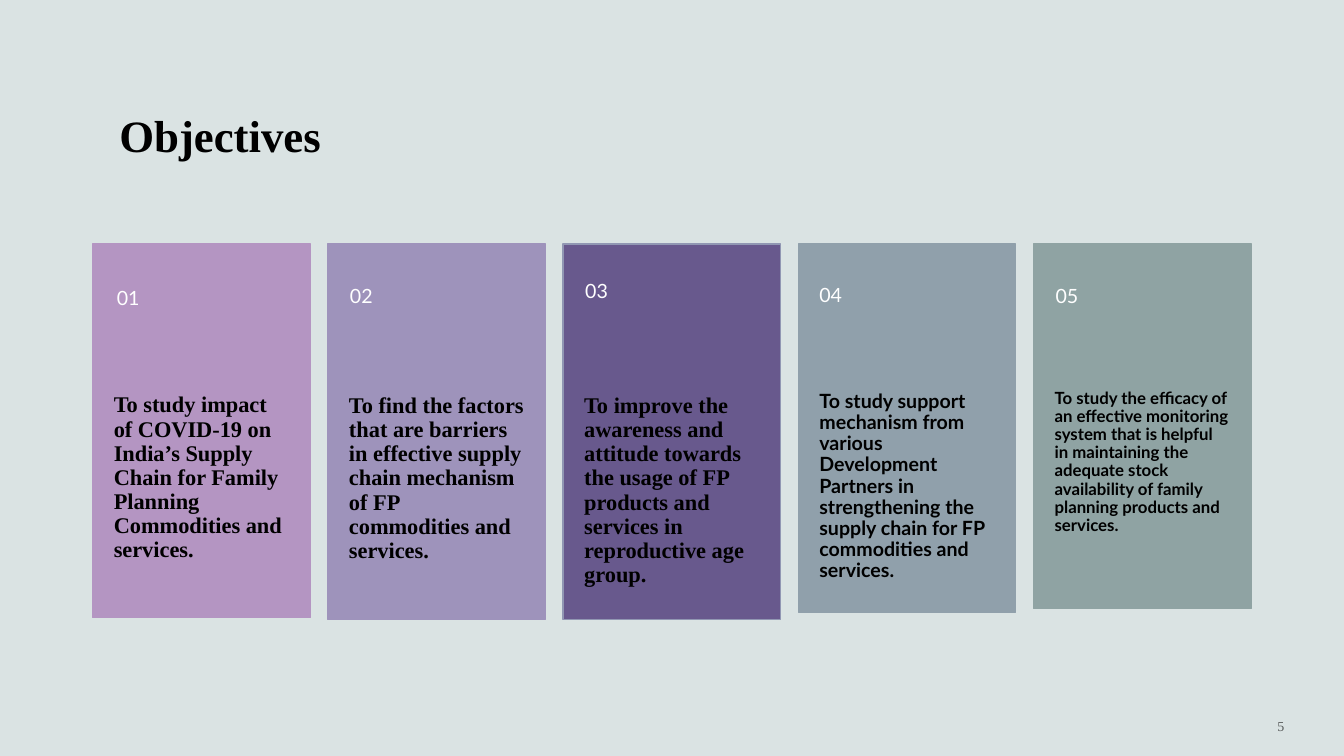
from dataclasses import dataclass

from lxml.etree import SubElement
from pptx import Presentation
from pptx.dml.color import RGBColor
from pptx.enum.shapes import MSO_SHAPE as Shape
from pptx.enum.text import MSO_ANCHOR as Anchor, MSO_AUTO_SIZE as AutoSize, PP_ALIGN as Align
from pptx.oxml.ns import qn
from pptx.shapes.shapetree import GroupShapes
from pptx.slide import Slide
from pptx.text.text import Font, TextFrame
from pptx.util import Pt

COLORS = {
    "background": "DAE3E3",
    "black": "000000",
    "white": "FFFFFF",
    "orchid": "B495C2",
    "lavender": "9E93BB",
    "violet": "68598D",
    "violet_edge": "9197B3",
    "slate": "90A0AB",
    "sage": "8FA3A3",
}
SERIF = "Times New Roman"
SANS = "Lato"

CARD_LEFT = 66.2
CARD_TOP = 174.3
CARD_PITCH = 168
CARD_WIDTH = 155.5
SIDE_INSET = 15.1
TEXT_SHARE = 0.6  # part of the card height given to the objective
NUMBER_HEIGHT = 75


@dataclass(frozen=True)
class Card:
    text: str
    font: str
    size: float
    fill: str
    edge: str
    height: float
    number_dx: float = 0
    number_dy: float = 0


CARDS = [
    Card("To study impact of COVID-19 on India’s Supply Chain for Family Planning "
         "Commodities and services.",
         SERIF, 16, "orchid", "orchid", 267, 2.2, 2.2),
    Card("To find the factors that are barriers in effective supply chain mechanism "
         "of FP commodities and services.",
         SERIF, 16, "lavender", "lavender", 268, 0.7, 0.7),
    Card("To improve the awareness and attitude towards the usage of FP products and "
         "services in reproductive age group.",
         SERIF, 16, "violet", "violet_edge", 268, 0.7, -3.3),
    Card("To study support mechanism from various Development Partners in "
         "strengthening the supply chain for FP commodities and services.",
         SANS, 14, "slate", "slate", 263),
    Card("To study the efficacy of an effective monitoring system that is helpful in "
         "maintaining the adequate stock availability of family planning products "
         "and services.",
         SANS, 12, "sage", "sage", 260.5, 0.7, 0.7),
]


def color(name: str) -> RGBColor:
    return RGBColor.from_string(COLORS[name])


def style_font(font: Font, name: str, size: float, color_name: str, bold: bool = False) -> None:
    font.name = name
    font.size = Pt(size)
    font.bold = bold
    font.color.rgb = color(color_name)


def add_card_text(shapes: GroupShapes, text: str, left: float, top: float, height: float,
                  inset_top: float, inset_bottom: float) -> TextFrame:
    box = shapes.add_textbox(Pt(left), Pt(top), Pt(CARD_WIDTH), Pt(height))
    frame = box.text_frame
    frame.word_wrap = True
    frame.margin_left = frame.margin_right = Pt(SIDE_INSET)
    frame.margin_top, frame.margin_bottom = Pt(inset_top), Pt(inset_bottom)
    frame.text = text
    frame.paragraphs[0].line_spacing = 0.9
    return frame


def add_card(slide: Slide, index: int, card: Card) -> None:
    shapes = slide.shapes.add_group_shape().shapes
    left = CARD_LEFT + index * CARD_PITCH

    panel = shapes.add_shape(Shape.RECTANGLE, Pt(left), Pt(CARD_TOP),
                             Pt(CARD_WIDTH), Pt(card.height))
    panel.shadow.inherit = False
    panel.fill.solid()
    panel.fill.fore_color.rgb = color(card.fill)
    panel.line.color.rgb = color(card.edge)
    panel.line.width = Pt(0.85)

    text_height = card.height * TEXT_SHARE
    objective = add_card_text(shapes, card.text, left, CARD_TOP + card.height - text_height,
                              text_height, 0, 26)
    style_font(objective.paragraphs[0].font, card.font, card.size, "black", bold=True)

    number = add_card_text(shapes, f"{index + 1:02}", left + card.number_dx,
                           CARD_TOP + card.number_dy, NUMBER_HEIGHT, 13, 13)
    number.vertical_anchor = Anchor.MIDDLE
    style_font(number.paragraphs[0].font, SANS, 14, "white")


def set_title(slide: Slide, text: str) -> None:
    title = slide.shapes.title
    title.left, title.top, title.width, title.height = Pt(78), Pt(31), Pt(804), Pt(88)
    frame = title.text_frame
    frame.text = text
    frame.auto_size = AutoSize.NONE
    frame.vertical_anchor = Anchor.BOTTOM
    paragraph = frame.paragraphs[0]
    paragraph.alignment = Align.LEFT
    style_font(paragraph.font, SERIF, 32, "black", bold=True)


def add_page_number(slide: Slide, number: int) -> None:
    box = slide.shapes.add_textbox(Pt(786), Pt(500.5), Pt(138.5), Pt(36))
    frame = box.text_frame
    frame.word_wrap = True
    frame.vertical_anchor = Anchor.MIDDLE
    frame.text = str(number)
    paragraph = frame.paragraphs[0]
    paragraph.alignment = Align.RIGHT
    run = paragraph.runs[0]
    style_font(run.font, SERIF, 10, "black")
    for rgb in run.font._element.iter(qn("a:srgbClr")):
        SubElement(rgb, qn("a:alpha"), val="60000")


def main() -> None:
    presentation = Presentation()
    presentation.slide_width, presentation.slide_height = Pt(960), Pt(540)
    slide = presentation.slides.add_slide(presentation.slide_layouts[5])
    slide.background.fill.solid()
    slide.background.fill.fore_color.rgb = color("background")

    set_title(slide, "Objectives")
    for index, card in enumerate(CARDS):
        add_card(slide, index, card)
    add_page_number(slide, 5)

    presentation.save("out.pptx")


if __name__ == "__main__":
    main()
